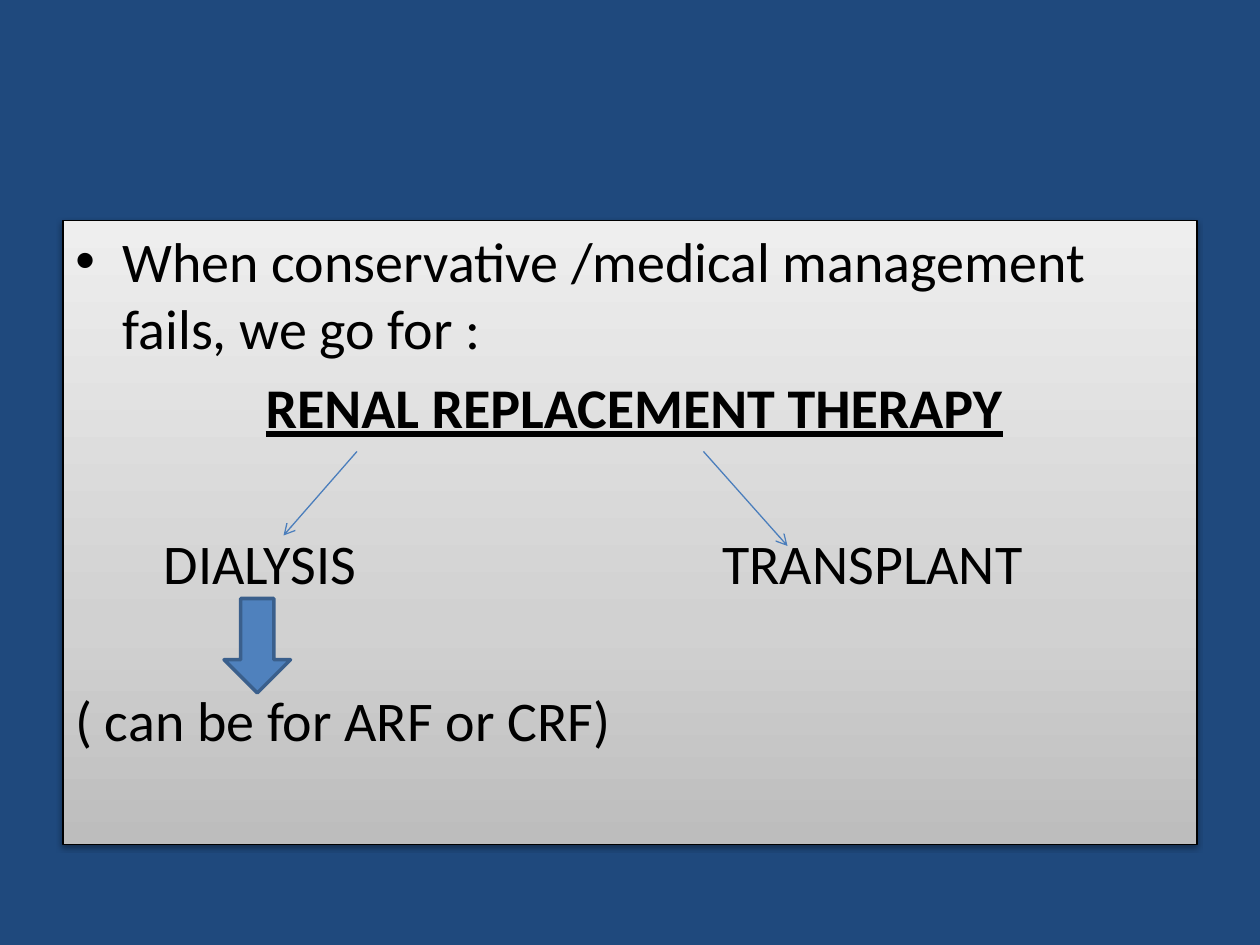
"""Build the renal replacement therapy slide."""
from copy import deepcopy

from lxml import etree
from pptx import Presentation
from pptx.dml.color import RGBColor
from pptx.enum.shapes import MSO_CONNECTOR, MSO_SHAPE
from pptx.enum.text import MSO_ANCHOR, PP_ALIGN
from pptx.oxml.ns import qn
from pptx.util import Pt

RECTANGLE = MSO_SHAPE.RECTANGLE
DOWN_ARROW = MSO_SHAPE.DOWN_ARROW
STRAIGHT = MSO_CONNECTOR.STRAIGHT
TOP = MSO_ANCHOR.TOP
LEFT = PP_ALIGN.LEFT


def color(value):
    return RGBColor.from_string(value)


def write(paragraph, text, before=0, margin=0, bullet=None, tabs=(), bold=False):
    properties = paragraph._p.get_or_add_pPr()
    if margin:
        properties.set("marL", str(Pt(margin)))
    if bullet:
        properties.set("indent", str(Pt(-margin)))
        etree.SubElement(properties, qn("a:buFont"), typeface="Arial")
        etree.SubElement(properties, qn("a:buChar"), char=bullet)
    if tabs:
        tab_list = etree.SubElement(properties, qn("a:tabLst"))
        for position in tabs:
            etree.SubElement(tab_list, qn("a:tab"), pos=str(Pt(position)), algn="l")
    paragraph.alignment = LEFT
    paragraph.space_before = Pt(before)
    run = paragraph.add_run()
    run.text = text
    run.font.name = "Calibri"
    run.font.size = Pt(32)
    run.font.bold = bold
    run.font.underline = bold
    run.font.color.rgb = color("000000")


presentation = Presentation()
presentation.slide_width = Pt(720)
presentation.slide_height = Pt(540)
slide = presentation.slides.add_slide(presentation.slide_layouts[6])
slide.background.fill.solid()
slide.background.fill.fore_color.rgb = color("1F497D")

panel = slide.shapes.add_shape(RECTANGLE, Pt(36), Pt(126), Pt(648), Pt(356.4))
panel.fill.gradient()
panel.fill.gradient_angle = 90
stop_list = panel._element.spPr.find(".//" + qn("a:gsLst"))
stop_list.append(deepcopy(stop_list[0]))
stops = [(0, "BDBDBD"), (0.35, "D1D1D1"), (1, "EEEEEE")]
for stop, (position, shade) in zip(panel.fill.gradient_stops, stops):
    stop.position = position
    stop.color.rgb = color(shade)
panel.line.color.rgb = color("000000")
panel.line.width = Pt(0.75)
panel.shadow.inherit = False
effects = panel._element.spPr.find(qn("a:effectLst"))
shadow = etree.SubElement(effects, qn("a:outerShdw"), blurRad=str(Pt(3.1)),
                          dist=str(Pt(1.6)), dir="5400000", rotWithShape="0")
shadow_color = etree.SubElement(shadow, qn("a:srgbClr"), val="000000")
etree.SubElement(shadow_color, qn("a:alpha"), val="38000")

frame = panel.text_frame
frame.word_wrap = True
frame.vertical_anchor = TOP
write(frame.paragraphs[0], "When conservative /medical management fails, we go for :",
      margin=27, bullet="•")
write(frame.add_paragraph(), "RENAL REPLACEMENT THERAPY", before=6.4, margin=108.8, bold=True)
write(frame.add_paragraph(), "\tDIALYSIS\tTRANSPLANT", before=51, tabs=(50.6, 369.6))
write(frame.add_paragraph(), "( can be for ARF or CRF)", before=51)

for start_x, end_x, end_y in [(204, 162, 306), (402, 450, 312)]:
    arrow = slide.shapes.add_connector(STRAIGHT, Pt(start_x), Pt(258), Pt(end_x), Pt(end_y))
    arrow.line.color.rgb = color("4B7EBC")
    arrow.line.width = Pt(0.75)
    arrow_properties = arrow._element.spPr
    etree.SubElement(arrow_properties.find(qn("a:ln")), qn("a:tailEnd"), type="arrow")
    etree.SubElement(arrow_properties, qn("a:effectLst"))

down_arrow = slide.shapes.add_shape(DOWN_ARROW, Pt(128), Pt(342), Pt(38), Pt(54))
down_arrow.shadow.inherit = False
down_arrow.fill.solid()
down_arrow.fill.fore_color.rgb = color("4F81BD")
down_arrow.line.color.rgb = color("3A5F8C")
down_arrow.line.width = Pt(2)

presentation.save("out.pptx")
